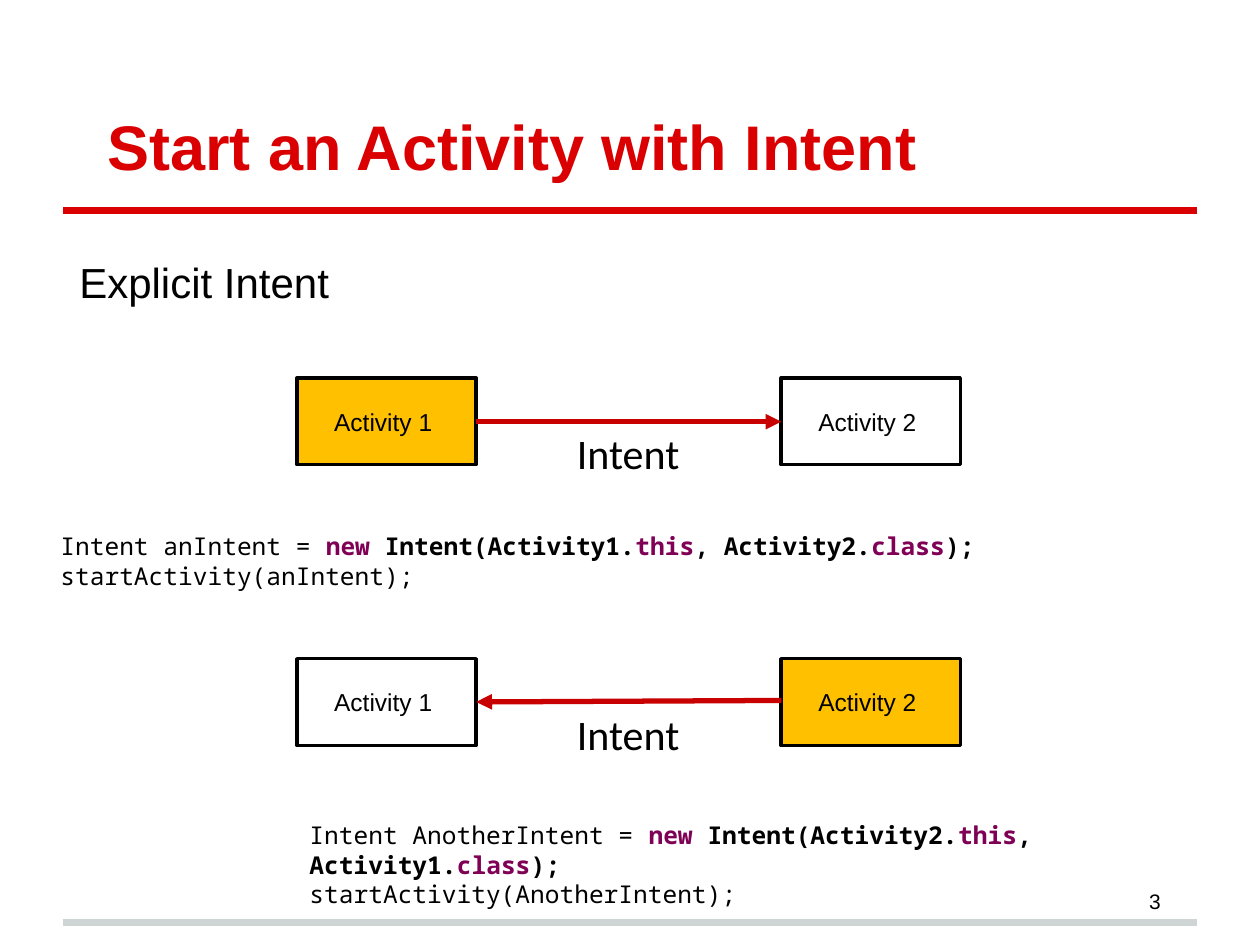
import pptx
import pptx.dml.color
import pptx.enum.shapes
import pptx.enum.text
import pptx.oxml.ns
import pptx.util
from lxml import etree

Cm, Pt = pptx.util.Cm, pptx.util.Pt
RGBColor = pptx.dml.color.RGBColor
ALIGN = pptx.enum.text.PP_ALIGN
ANCHOR = pptx.enum.text.MSO_ANCHOR
qn = pptx.oxml.ns.qn

RED = RGBColor(0xDA, 0x00, 0x02)
ARROW_RED = RGBColor(0xC9, 0x00, 0x00)
GREY = RGBColor(0xCF, 0xD4, 0xD4)
AMBER = RGBColor(0xFF, 0xC0, 0x00)
PURPLE = RGBColor(0x7F, 0x00, 0x55)
BLACK = RGBColor(0x00, 0x00, 0x00)
WHITE = RGBColor(0xFF, 0xFF, 0xFF)

# Columns of the diagram, in cm
LEFT_X, RIGHT_X = 5.99, 15.75
BOX_W, BOX_H = 3.61, 1.75


def add_run(p, text, size, font="Arial", color=BLACK, bold=False):
    r = p.add_run()
    r.text = text
    r.font.size = Pt(size)
    r.font.name = font
    r.font.color.rgb = color
    r.font.bold = bold


def add_text_frame(s, x, y, w, h, anchor=ANCHOR.TOP, wrap=True):
    tf = s.shapes.add_textbox(Cm(x), Cm(y), Cm(w), Cm(h)).text_frame
    tf.word_wrap = wrap
    tf.vertical_anchor = anchor
    return tf


def add_line(s, x1, y1, x2, y2, color, width, arrow=False):
    straight = pptx.enum.shapes.MSO_CONNECTOR.STRAIGHT
    line = s.shapes.add_connector(straight, Cm(x1), Cm(y1), Cm(x2), Cm(y2))
    line.line.color.rgb = color
    line.line.width = Pt(width)
    if arrow:
        ln = line.line._get_or_add_ln()
        etree.SubElement(ln, qn("a:tailEnd"), type="triangle")
    etree.SubElement(line._element.spPr, qn("a:effectLst"))


def add_activity(s, x, y, label, fill):
    sp = s.shapes.add_shape(pptx.enum.shapes.MSO_SHAPE.RECTANGLE,
                            Cm(x), Cm(y), Cm(BOX_W), Cm(BOX_H))
    sp.shadow.inherit = False
    sp.fill.solid()
    sp.fill.fore_color.rgb = fill
    sp.line.color.rgb = BLACK
    sp.line.width = Pt(2)
    tf = sp.text_frame
    tf.vertical_anchor = ANCHOR.MIDDLE
    p = tf.paragraphs[0]
    p.alignment = ALIGN.CENTER
    add_run(p, label, 14)


def add_flow(s, y, fills, start, end):
    """Two activities joined by an arrow labelled Intent."""
    add_activity(s, LEFT_X, y, "Activity 1 ", fills[0])
    add_activity(s, RIGHT_X, y, "Activity 2 ", fills[1])
    add_line(s, *start, *end, ARROW_RED, 3, arrow=True)
    tf = add_text_frame(s, 11.38, y + 0.88, 2.59, 1.3, wrap=False)
    add_run(tf.paragraphs[0], "Intent", 24, "Calibri")


def add_code(s, x, y, w, name, source, target):
    """Code that starts the target activity from the source activity."""
    tf = add_text_frame(s, x, y, w, 1.45)
    p = tf.paragraphs[0]
    for text, color, bold in [
        (f"Intent {name} = ", BLACK, False),
        ("new", PURPLE, True),
        (f" Intent({source}.", BLACK, True),
        ("this", PURPLE, True),
        (f", {target}.", BLACK, True),
        ("class", PURPLE, True),
        (");", BLACK, True),
    ]:
        add_run(p, text, 14, "Noto Sans Mono", color, bold)
    add_run(tf.add_paragraph(), f"startActivity({name});", 14, "Noto Sans Mono")


def main():
    prs = pptx.Presentation()
    prs.slide_width, prs.slide_height = Cm(25.4), Cm(19.05)
    s = prs.slides.add_slide(prs.slide_layouts[6])

    # Rules above the footer and below the title
    add_line(s, 1.27, 18.59, 24.13, 18.59, GREY, 4)
    add_line(s, 1.27, 4.24, 24.13, 4.24, RED, 4)

    # Title
    tf = add_text_frame(s, 1.27, 0.76, 22.86, 3.18, ANCHOR.BOTTOM)
    tf.margin_top = tf.margin_bottom = Cm(0.25)
    p = tf.paragraphs[0]
    p._p.get_or_add_pPr().set("indent", str(Cm(0.64)))
    add_run(p, "Start an Activity with Intent", 36, color=RED, bold=True)

    # Slide number
    tf = add_text_frame(s, 17.93, 17.65, 5.72, 1.02, ANCHOR.MIDDLE)
    tf.paragraphs[0].alignment = ALIGN.RIGHT
    add_run(tf.paragraphs[0], "3", 12)

    # Subtitle
    tf = add_text_frame(s, 1.35, 5.05, 20.47, 1.27)
    add_run(tf.paragraphs[0], "Explicit Intent", 24)

    # Activity 1 starts activity 2, then the other way round
    inner_left = LEFT_X + BOX_W
    add_flow(s, 7.62, (AMBER, WHITE), (inner_left, 8.5), (RIGHT_X, 8.5))
    add_code(s, 0.97, 10.59, 19.46, "anIntent", "Activity1", "Activity2")
    add_flow(s, 13.28, (WHITE, AMBER), (RIGHT_X, 14.12), (inner_left, 14.15))
    add_code(s, 5.99, 16.41, 18.97, "AnotherIntent", "Activity2", "Activity1")

    prs.save("out.pptx")


if __name__ == "__main__":
    main()
